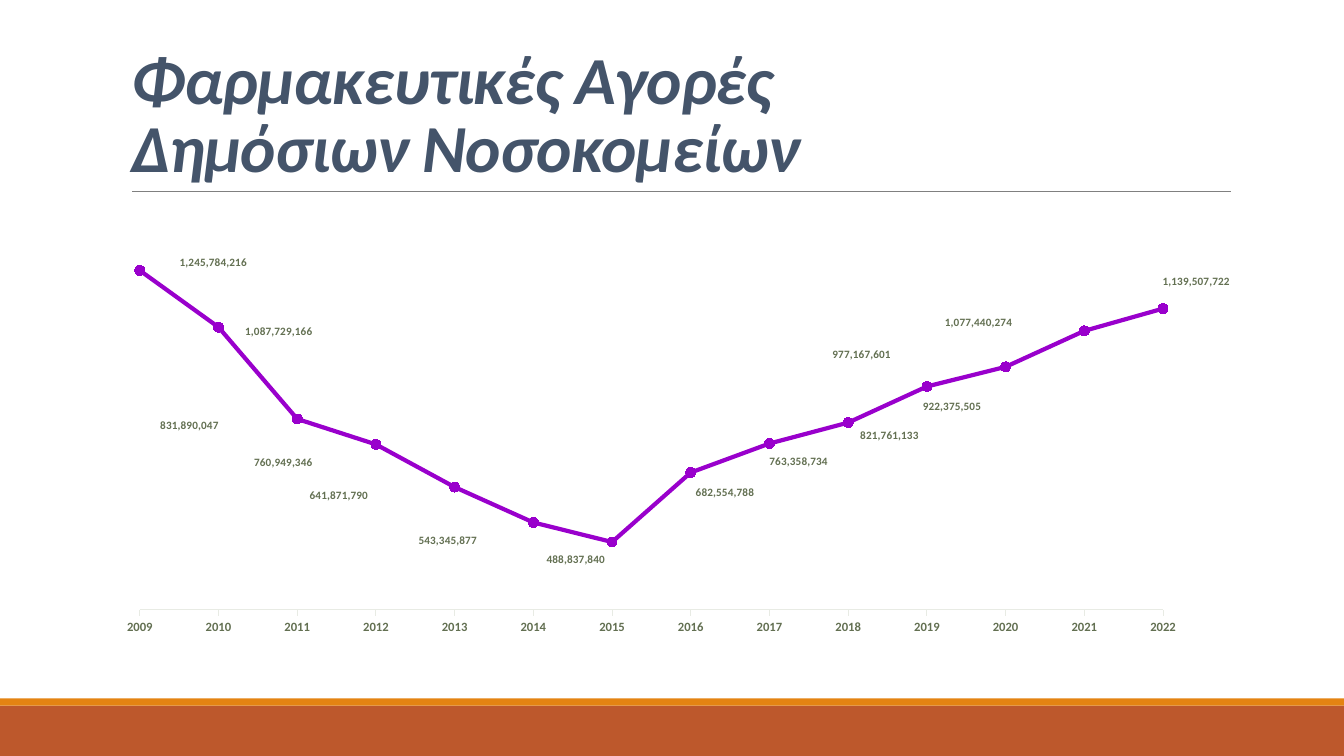
from lxml import etree
from pptx import Presentation
from pptx.chart.data import CategoryChartData
from pptx.dml.color import RGBColor
from pptx.enum.chart import (XL_CHART_TYPE, XL_LABEL_POSITION, XL_MARKER_STYLE,
                             XL_TICK_LABEL_POSITION, XL_TICK_MARK)
from pptx.enum.shapes import MSO_CONNECTOR, MSO_SHAPE
from pptx.enum.text import MSO_ANCHOR, MSO_AUTO_SIZE, PP_ALIGN
from pptx.oxml.ns import qn
from pptx.util import Inches, Pt

LINE_MARKERS = XL_CHART_TYPE.LINE_MARKERS
CENTER = XL_LABEL_POSITION.CENTER
CIRCLE = XL_MARKER_STYLE.CIRCLE
LOW = XL_TICK_LABEL_POSITION.LOW
OUTSIDE, NO_TICK = XL_TICK_MARK.OUTSIDE, XL_TICK_MARK.NONE
RECTANGLE = MSO_SHAPE.RECTANGLE
STRAIGHT = MSO_CONNECTOR.STRAIGHT
BOTTOM, LEFT = MSO_ANCHOR.BOTTOM, PP_ALIGN.LEFT
NO_AUTOFIT = MSO_AUTO_SIZE.NONE

# Content
FONT = "Calibri"
COLORS = {"title": "44546A", "rule": "808080", "band": "BD582C", "stripe": "E48312",
          "series": "9900CC", "label": "637052", "axis": "E8EBE4", "text": "000000"}
TITLE_LINES = ["Φαρμακευτικές Αγορές ", "Δημόσιων Νοσοκομείων"]
# Year, purchases, and label offset from its point in inches (right, down)
PURCHASES = [
    (2009, 1245784216, (0.73, -0.08)),
    (2010, 1087729166, (0.60, 0.05)),
    (2011, 831890047, (-1.07, 0.07)),
    (2012, 760949346, (-0.92, 0.18)),
    (2013, 641871790, (-1.15, 0.09)),
    (2014, 543345877, (-0.85, 0.18)),
    (2015, 488837840, (-0.36, 0.18)),
    (2016, 682554788, (0.34, 0.20)),
    (2017, 763358734, (0.29, 0.18)),
    (2018, 821761133, (0.41, 0.13)),
    (2019, 922375505, (0.25, 0.20)),
    (2020, 977167601, (-1.43, -0.12)),
    (2021, 1077440274, (-1.05, -0.08)),
    (2022, 1139507722, (0.33, -0.27)),
]
BANDS = [("band", 7, 0.5), ("stripe", 6.93, 0.07)]  # colour, top, height

# Geometry in inches; the plot area is in fractions of the chart
SLIDE_WIDTH, SLIDE_HEIGHT = 13.33, 7.5
CHART_LEFT, CHART_TOP, CHART_WIDTH, CHART_HEIGHT = 1.2, 2.02, 11, 4.4
PLOT = {"x": 0.017, "y": 0.026, "w": 0.924, "h": 0.89}


def color(name):
    return RGBColor.from_string(COLORS[name])


def format_font(font, size, color_name, bold=False, italic=False):
    font.name, font.size = FONT, Pt(size)
    font.bold, font.italic = bold, italic
    font.color.rgb = color(color_name)


def write_lines(paragraph, lines, spacing=0, **font_format):
    for index, line in enumerate(lines):
        if index:
            paragraph.add_line_break()
        run = paragraph.add_run()
        run.text = line
        format_font(run.font, **font_format)
        run.font._element.set("spc", str(int(spacing * 100)))


def make_layout(**values):
    layout = etree.Element(qn("c:layout"))
    manual = etree.SubElement(layout, qn("c:manualLayout"))
    for tag, value in values.items():
        etree.SubElement(manual, qn(f"c:{tag}")).set("val", str(value))
    return layout


def add_bands(slide):
    for name, top, height in BANDS:
        shape = slide.shapes.add_shape(RECTANGLE, 0, Inches(top),
                                       Inches(SLIDE_WIDTH), Inches(height))
        shape.shadow.inherit = False
        shape.fill.solid()
        shape.fill.fore_color.rgb = color(name)
        shape.line.fill.background()


def add_title(slide):
    title = slide.shapes.title
    title.left, title.top = Inches(1.2), Inches(0.31)
    title.width, title.height = Inches(11), Inches(1.59)
    frame = title.text_frame
    frame.auto_size = NO_AUTOFIT
    frame.word_wrap = True
    frame.vertical_anchor = BOTTOM
    paragraph = frame.paragraphs[0]
    paragraph.alignment, paragraph.line_spacing = LEFT, 0.85
    write_lines(paragraph, TITLE_LINES, spacing=-0.5, size=48,
                color_name="title", bold=True, italic=True)
    # Rule under the title
    rule = slide.shapes.add_connector(STRAIGHT, Inches(1.31), Inches(1.9),
                                      Inches(12.21), Inches(1.9))
    rule.line.color.rgb = color("rule")
    rule.line.width = Pt(0.5)
    etree.SubElement(rule._element.spPr, qn("a:effectLst"))


def format_axes(chart):
    years = chart.category_axis
    years.major_tick_mark, years.minor_tick_mark = OUTSIDE, NO_TICK
    years.tick_label_position = LOW
    years.has_major_gridlines = False
    years.format.line.color.rgb = color("axis")
    years.format.line.width = Pt(0.75)
    format_font(years.tick_labels.font, 9, "label", bold=True)

    amounts = chart.value_axis
    amounts.minimum_scale, amounts.maximum_scale = 300_000_000, 1_400_000_000
    amounts.has_major_gridlines = False
    amounts.visible = False
    # Start the line on the left edge of the plot area
    axis = amounts._element
    for old in axis.findall(qn("c:crossBetween")):
        axis.remove(old)
    between = etree.Element(qn("c:crossBetween"))
    between.set("val", "midCat")
    axis.find(qn("c:crosses")).addnext(between)


def format_series(series):
    series.smooth = False
    series.format.line.color.rgb = color("series")
    series.format.line.width = Pt(3)
    marker = series.marker
    marker.style, marker.size = CIRCLE, 7
    marker.format.fill.solid()
    marker.format.fill.fore_color.rgb = color("series")
    marker.format.line.color.rgb = color("series")


def place_labels(series):
    labels = series.data_labels
    labels.show_value = True
    labels.number_format, labels.number_format_is_linked = "#,##0", False
    format_font(labels.font, 8, "label", bold=True)
    for index in range(len(PURCHASES)):
        label = series.points[index].data_label
        format_font(label.font, 8, "label", bold=True)
        label.position = CENTER
    for element, (_, _, (right, down)) in zip(
            series._element.iter(qn("c:dLbl")), PURCHASES):
        layout = make_layout(x=round(right / CHART_WIDTH, 4),
                             y=round(down / CHART_HEIGHT, 4))
        element.find(qn("c:idx")).addnext(layout)
    for leader in series._element.iter(qn("c:showLeaderLines")):
        leader.set("val", "0")


def add_purchases_chart(slide):
    data = CategoryChartData(number_format="#,##0")
    data.categories = [str(year) for year, _, _ in PURCHASES]
    data.add_series("Series 1", [amount for _, amount, _ in PURCHASES])
    chart = slide.shapes.add_chart(
        LINE_MARKERS, Inches(CHART_LEFT), Inches(CHART_TOP),
        Inches(CHART_WIDTH), Inches(CHART_HEIGHT), data).chart
    chart.has_legend = chart.has_title = False
    format_font(chart.font, 10, "text")
    plot = chart.plots[0]
    plot.vary_by_categories = False
    format_axes(chart)
    format_series(plot.series[0])
    place_labels(plot.series[0])
    # Fixed plot area
    area = chart._chartSpace.chart.plotArea
    for old in area.findall(qn("c:layout")):
        area.remove(old)
    area.insert(0, make_layout(layoutTarget="inner", xMode="edge", yMode="edge", **PLOT))


def main():
    presentation = Presentation()
    presentation.slide_width = Inches(SLIDE_WIDTH)
    presentation.slide_height = Inches(SLIDE_HEIGHT)
    slide = presentation.slides.add_slide(presentation.slide_layouts[5])
    add_bands(slide)
    add_title(slide)
    add_purchases_chart(slide)
    presentation.save("out.pptx")


if __name__ == "__main__":
    main()
